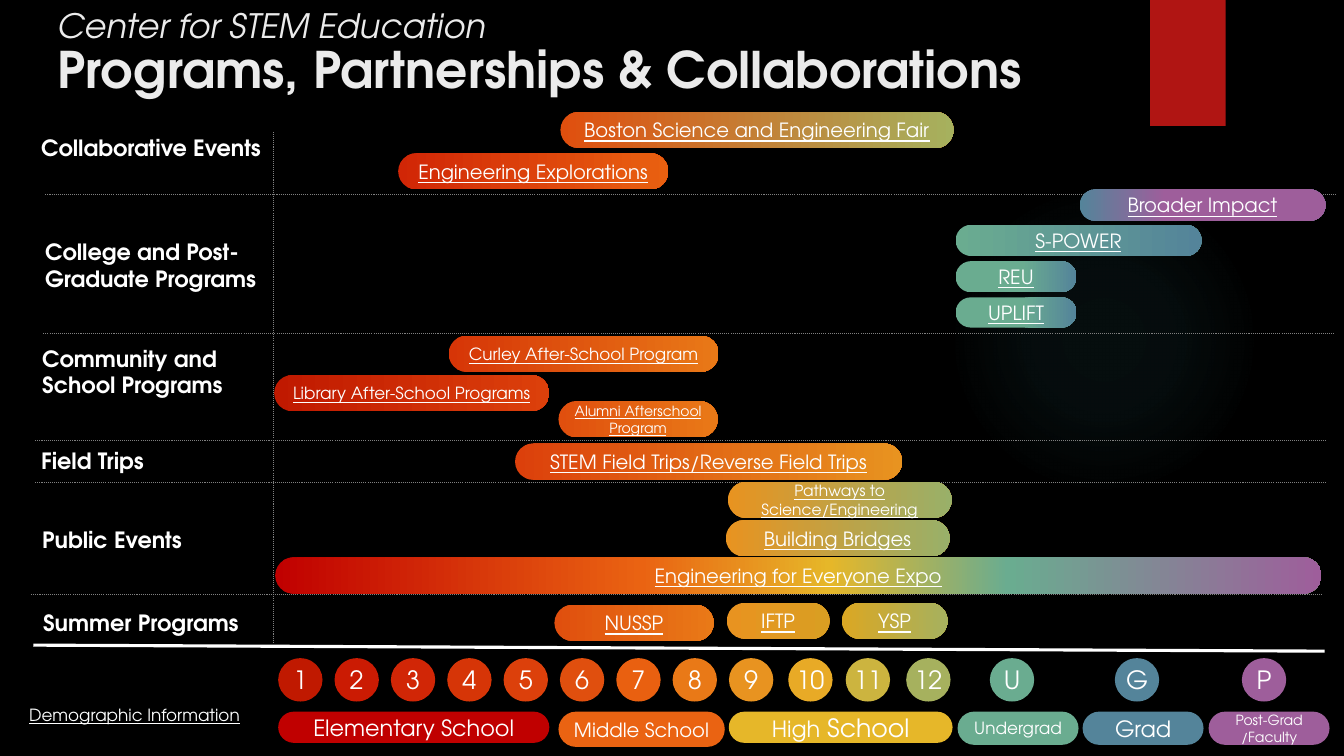
"""Build the STEM programs timeline slide on a grid of tenth-of-an-inch cells."""
import lxml.etree
import pptx
import pptx.dml.color
import pptx.enum.dml
import pptx.enum.shapes
import pptx.enum.text
import pptx.oxml.ns
import pptx.util

COLUMNS, ROWS = 133.33, 75
CELL = pptx.util.Inches(0.1)
FONT = "TeX Gyre Adventor"
COLOURS = {
    "background": "000000", "heading": "EBEBEB", "white": "FFFFFF", "link": "FEFFFF",
    "rule": "808080", "ribbon": "B01513", "glow": "50B9C1",
    "1": "C01900", "2": "CB1B03", "3": "D12606", "4": "D63507", "5": "DC400B", "6": "E04F0E",
    "7": "E96010", "8": "E97917", "9": "E89320", "10": "E8AA26", "11": "CCB43F", "12": "A6B15E",
    "U": "6AAC90", "G": "54849A", "P": "9E5E9B",
    "elementary": "C00000", "middle": "EA6312", "high": "E6B729",
    "amber": "DA9E22", "gold": "DBA723", "sage": "99B069",
}
GRADE_PITCH = 5.59
GRADE_LEFTS = {str(grade): 27.6 + GRADE_PITCH * (grade - 1) for grade in range(1, 10)}
GRADE_LEFTS.update({"10": 78.2, "11": 83.9, "12": 89.9, "U": 98.2, "G": 110.6, "P": 123.2})
SCHOOLS = [
    ([("Elementary School", 16)], 27.6, 26.9, 3.1, "elementary"),
    ([("Middle School", 14)], 55.4, 16.5, 3.5, "middle"),
    ([("High", 16), (" School", 18)], 72.3, 22.2, 3.1, "high"),
    ([("Undergrad", 12)], 95, 12, 3.3, "U"),
    ([("Grad", 16)], 107.4, 12, 3.3, "G"),
    ([("Post-Grad /Faculty", 10)], 119.9, 12, 3.3, "P"),
]
LABELS = [
    ("Collaborative Events", 3.1, 12.8, 25.1, 3.7),
    ("College and Post-Graduate Programs", 3.5, 23.1, 24, 5.4),
    ("Community and School Programs", 3.2, 33.7, 21.9, 6.4),
    ("Field Trips", 3.1, 43.9, 25.7, 3.7),
    ("Public Events", 3.2, 51.7, 21.9, 3.7),
    ("Summer Programs", 3.3, 59.9, 21.9, 3.3),
]
ROW_RULES = [(4.5, 19.3), (4.3, 33.1), (3.5, 43.7), (3.5, 47.9), (3.1, 59)]
ACROSS_ALL = [(0, "elementary"), (35, "middle"), (53, "high"), (70, "U"), (100, "P")]
PROGRAMS = [
    ("Boston Science and Engineering Fair", 14, 55.6, 11.1, 39, 3.6, [(0, "6"), (100, "12")]),
    ("Engineering Explorations", 14, 39.5, 15.2, 26.8, 3.6, [(0, "3"), (100, "7")]),
    ("Broader Impact", 14, 107.1, 18.8, 24.4, 3.1, [(0, "G"), (35, "P")]),
    ("S-POWER", 14, 94.8, 22.3, 24.4, 3.1, [(0, "U"), (100, "G")]),
    ("REU", 14, 94.8, 25.9, 12, 3.1, [(55, "U"), (100, "G")]),
    ("UPLIFT", 14, 94.8, 29.5, 12, 3, [(55, "U"), (100, "G")]),
    ("Curley After-School Program", 12, 44.5, 33.3, 26.8, 3.6, [(0, "4"), (100, "8")]),
    ("Library After-School Programs", 12, 27.2, 37.2, 27.3, 3.6, [(0, "1"), (100, "5")]),
    ("Alumni Afterschool Program", 10, 55.4, 39.8, 15.8, 3.6, [(0, "6"), (100, "8")]),
    ("STEM Field Trips/Reverse Field Trips", 14, 51.1, 44, 38.4, 3.6, [(0, "5"), (100, "9")]),
    ("Pathways to Science/Engineering", 11, 72.2, 47.8, 22.2, 3.6, [(0, "9"), (100, "sage")]),
    ("Building Bridges", 14, 72, 51.6, 22.2, 3.6, [(0, "9"), (100, "sage")]),
    ("Engineering for Everyone Expo", 14, 27.3, 55.3, 103.8, 3.6, ACROSS_ALL),
    ("NUSSP", 14, 55, 60, 15.8, 3.6, [(0, "6"), (100, "8")]),
    ("IFTP", 14, 72.1, 59.8, 10.2, 3.6, [(0, "9"), (100, "amber")]),
    ("YSP", 14, 83.5, 59.8, 10.5, 3.6, [(0, "gold"), (100, "12")]),
]


def cells(*counts):
    """Turn counts of grid cells into lengths."""
    return [round(count * CELL) for count in counts]


def colour(name):
    """Look up a named colour."""
    return pptx.dml.color.RGBColor.from_string(COLOURS[name])


def add_run(paragraph, text, size, colour_name, bold=False, italic=False, underline=False):
    """Append one formatted run."""
    run = paragraph.add_run()
    run.text = text
    run.font.name = FONT
    run.font.size = pptx.util.Pt(size)
    run.font.bold = bold
    run.font.italic = italic
    run.font.underline = underline
    run.font.color.rgb = colour(colour_name)


def set_gradient(shape, stops):
    """Fill a shape with (position, colour, opacity) stops from left to right."""
    shape.fill.gradient()
    shape.fill.gradient_angle = 0
    qualified = pptx.oxml.ns.qn
    stop_list = next(shape.element.iter(qualified("a:gsLst")))
    for stop in list(stop_list):
        stop_list.remove(stop)
    for position, name, opacity in stops:
        stop = lxml.etree.SubElement(stop_list, qualified("a:gs"), pos=str(position * 1000))
        value = lxml.etree.SubElement(stop, qualified("a:srgbClr"), val=COLOURS[name])
        if opacity < 100:
            lxml.etree.SubElement(value, qualified("a:alpha"), val=str(opacity * 1000))


def add_figure(slide, kind, box, fill):
    """Add a borderless preset shape with a plain or gradient fill."""
    shape = slide.shapes.add_shape(kind, *cells(*box))
    shape.shadow.inherit = False
    shape.line.fill.background()
    if isinstance(fill, str):
        shape.fill.solid()
        shape.fill.fore_color.rgb = colour(fill)
    else:
        set_gradient(shape, fill)
    return shape


def add_glow(slide):
    """Add the faint round glow."""
    glow = add_figure(slide, pptx.enum.shapes.MSO_SHAPE.OVAL, (94.1, 18.3, 30.8, 30.8),
                      [(0, "glow", 7), (36, "glow", 6), (69, "glow", 0)])
    qualified = pptx.oxml.ns.qn
    linear = next(glow.element.iter(qualified("a:lin")))
    radial = lxml.etree.Element(qualified("a:path"), path="circle")
    lxml.etree.SubElement(radial, qualified("a:fillToRect"), l="50000", t="50000", r="50000", b="50000")
    linear.getparent().replace(linear, radial)


def add_centred_text(shape, runs, colour_name, underline=False):
    """Write (text, size) runs in the middle of a shape."""
    frame = shape.text_frame
    frame.vertical_anchor = pptx.enum.text.MSO_ANCHOR.MIDDLE
    paragraph = frame.paragraphs[0]
    paragraph.alignment = pptx.enum.text.PP_ALIGN.CENTER
    for text, size in runs:
        add_run(paragraph, text, size, colour_name, underline=underline)


def add_pill(slide, runs, box, fill, colour_name="white", underline=False):
    """Add a bar with fully rounded ends and centred text."""
    pill = add_figure(slide, pptx.enum.shapes.MSO_SHAPE.ROUNDED_RECTANGLE, box, fill)
    pill.adjustments[0] = 0.5
    add_centred_text(pill, runs, colour_name, underline)


def add_grade(slide, grade, left):
    """Add one grade circle."""
    circle = add_figure(slide, pptx.enum.shapes.MSO_SHAPE.OVAL, (left, 65.3, 4.4, 4.3), grade)
    frame = circle.text_frame
    frame.margin_left = frame.margin_right = frame.margin_top = frame.margin_bottom = 0
    frame.word_wrap = False
    add_centred_text(circle, [(grade, 18)], "white")


def add_text(slide, text, box, size, colour_name, **style):
    """Add a wrapped text box with one run."""
    frame = slide.shapes.add_textbox(*cells(*box)).text_frame
    frame.word_wrap = True
    add_run(frame.paragraphs[0], text, size, colour_name, **style)


def add_rule(slide, ends, colour_name="rule", width=0.75, dotted=True):
    """Add a straight line between two grid points."""
    rule = slide.shapes.add_connector(pptx.enum.shapes.MSO_CONNECTOR.STRAIGHT, *cells(*ends))
    rule.line.color.rgb = colour(colour_name)
    rule.line.width = pptx.util.Pt(width)
    if dotted:
        rule.line.dash_style = pptx.enum.dml.MSO_LINE.ROUND_DOT
    lxml.etree.SubElement(rule.element.spPr, pptx.oxml.ns.qn("a:effectLst"))


def set_title(slide, text):
    """Place and format the slide title."""
    title = slide.shapes.title
    title.left, title.top, title.width, title.height = cells(4.7, 3.3, 105.3, 5.8)
    frame = title.text_frame
    frame.auto_size = pptx.enum.text.MSO_AUTO_SIZE.NONE
    frame.vertical_anchor = pptx.enum.text.MSO_ANCHOR.TOP
    paragraph = frame.paragraphs[0]
    paragraph.alignment = pptx.enum.text.PP_ALIGN.LEFT
    add_run(paragraph, text, 36, "heading", bold=True)


def main():
    """Build and save the presentation."""
    presentation = pptx.Presentation()
    presentation.slide_width, presentation.slide_height = cells(COLUMNS, ROWS)
    slide = presentation.slides.add_slide(presentation.slide_layouts[5])
    slide.background.fill.solid()
    slide.background.fill.fore_color.rgb = colour("background")
    add_glow(slide)
    add_figure(slide, pptx.enum.shapes.MSO_SHAPE.RECTANGLE, (114.1, 0, 7.5, 12.5), "ribbon")
    set_title(slide, "Programs, Partnerships & Collaborations")
    add_text(slide, "Center for STEM Education", (4.7, 0, 105.3, 5.8), 24, "heading", italic=True)
    for left, top in ROW_RULES:
        add_rule(slide, (left, top, left + 128, top))
    add_rule(slide, (27.1, 13.1, 27.1, 63.7))
    add_rule(slide, (3.3, 64, 131.4, 64.6), "white", 2.25, dotted=False)
    for text, *box in LABELS:
        add_text(slide, text, box, 16, "white", bold=True)
    for text, size, left, top, width, height, stops in PROGRAMS:
        fill = [(position, name, 100) for position, name in stops]
        add_pill(slide, [(text, size)], (left, top, width, height), fill, "link", underline=True)
    for grade, left in GRADE_LEFTS.items():
        add_grade(slide, grade, left)
    for runs, left, width, height, fill in SCHOOLS:
        add_pill(slide, runs, (left, 70.6, width, height), fill)
    add_text(slide, "Demographic Information", (1.9, 69.4, 23.2, 3), 12, "link", underline=True)
    presentation.save("out.pptx")


if __name__ == "__main__":
    main()
